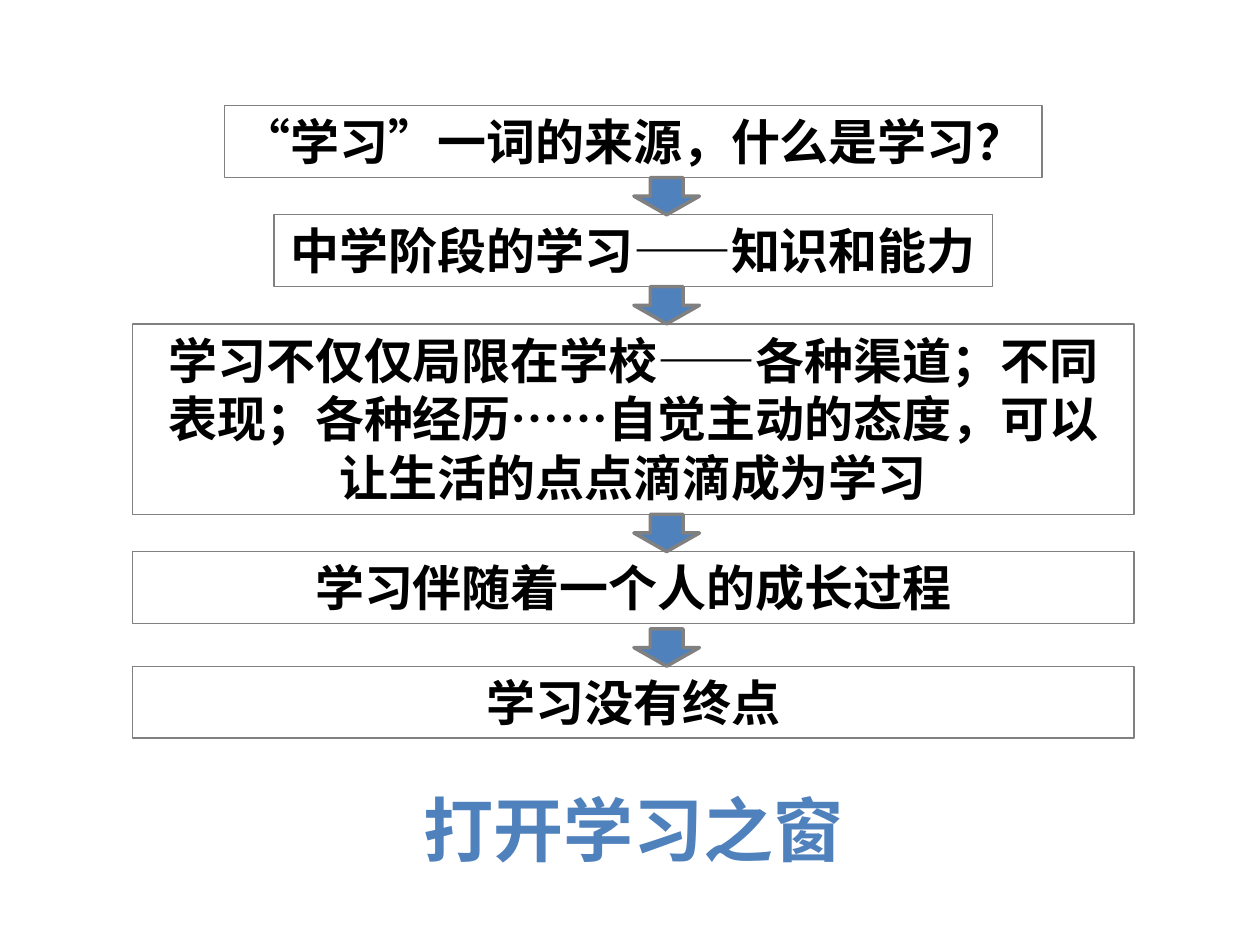
from pptx import Presentation
from pptx.dml.color import RGBColor
from pptx.enum.shapes import MSO_SHAPE as Kind
from pptx.enum.text import MSO_ANCHOR as Anchor, MSO_AUTO_SIZE as Auto, PP_ALIGN as Align
from pptx.util import Cm, Pt

INK = {"text": "000000", "line": "808080", "blue": "4F81BD"}
FONT = "Noto Sans CJK SC"
ROW, GAP = 1.45, 0.75
STEPS = [
    ("“学习”一词的来源，什么是学习？", 16.49, ROW, GAP, False),
    ("中学阶段的学习——知识和能力", 14.48, ROW, GAP, False),
    ("学习不仅仅局限在学校——各种渠道；不同表现；各种经历……"
     "自觉主动的态度，可以让生活的点点滴滴成为学习", 20.19, 3.84, GAP, True),
    ("学习伴随着一个人的成长过程", 20.19, ROW, 0.86, True),
    ("学习没有终点", 20.19, ROW, 0, True),
]


def tint(name):
    return RGBColor.from_string(INK[name])


def style(frame, text, font, size, ink, wrap=True):
    frame.text = text
    frame.word_wrap = wrap
    frame.auto_size = Auto.NONE
    para = frame.paragraphs[0]
    para.alignment = Align.CENTER
    face = para.runs[0].font
    face.name, face.size, face.bold = font, Pt(size), True
    face.color.rgb = tint(ink)


def shape(slide, kind, left, top, width, height, weight):
    item = slide.shapes.add_shape(kind, Cm(left), Cm(top), Cm(width), Cm(height))
    item.shadow.inherit = False
    item.line.color.rgb = tint("line")
    item.line.width = Pt(weight)
    return item


def flow(slide, left, top, width):
    for text, wide, high, gap, wrap in STEPS:
        box = shape(slide, Kind.RECTANGLE, left + (width - wide) / 2, top, wide, high, 0.75)
        box.fill.background()
        box.text_frame.vertical_anchor = Anchor.TOP
        style(box.text_frame, text, FONT, 28, "text", wrap)
        top += high + gap
        if gap:
            arrow = shape(slide, Kind.DOWN_ARROW, left + 10.11, top - GAP, 1.32, GAP, 2)
            arrow.fill.solid()
            arrow.fill.fore_color.rgb = tint("blue")


def title(slide, left, top, width, height):
    head = slide.shapes.title
    head.left, head.top = Cm(left), Cm(top)
    head.width, head.height = Cm(width), Cm(height)
    head.text_frame.vertical_anchor = Anchor.TOP
    style(head.text_frame, "打开学习之窗", "Calibri", 40, "blue")


def main():
    deck = Presentation()
    deck.slide_width, deck.slide_height = Cm(25.4), Cm(19.05)
    slide = deck.slides.add_slide(deck.slide_layouts[5])
    flow(slide, 2.67, 2.13, 20.19)
    title(slide, 2.67, 15.72, 20.19, 1.96)
    deck.save("out.pptx")


if __name__ == "__main__":
    main()
